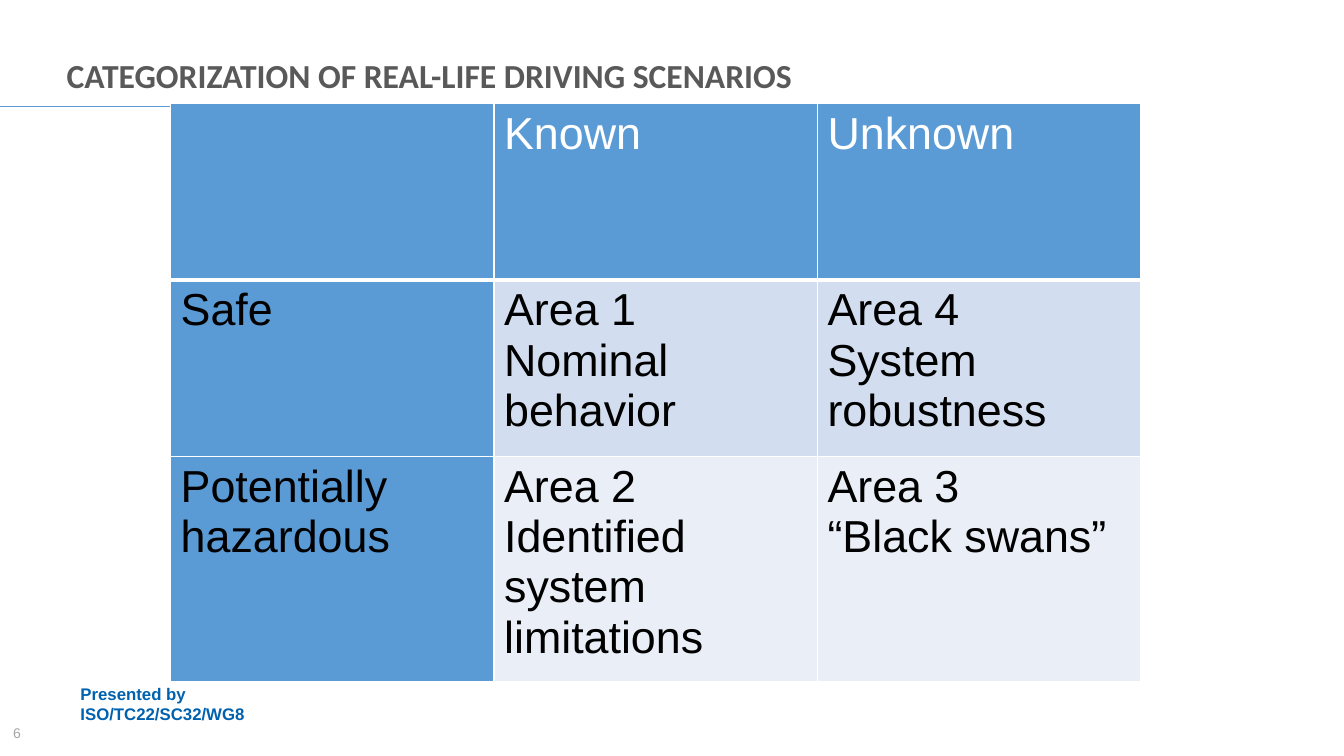
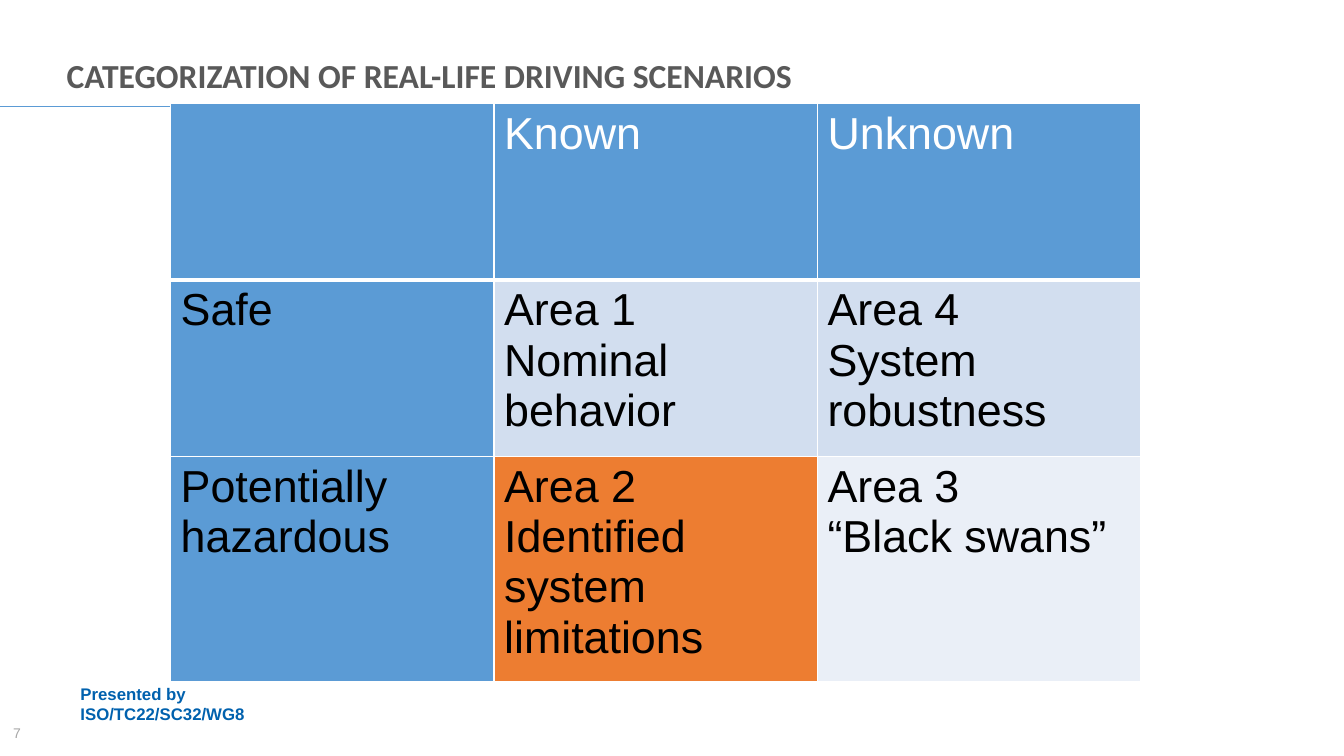
import pptx
import pptx.dml.color
import pptx.enum.shapes
import pptx.enum.text
import pptx.oxml
import pptx.oxml.ns
import pptx.util

Pt = pptx.util.Pt
RGBColor = pptx.dml.color.RGBColor

BLUE = RGBColor(0x5B, 0x9B, 0xD5)
PALE_BLUE = RGBColor(0xD2, 0xDE, 0xEF)
PALEST_BLUE = RGBColor(0xEA, 0xEF, 0xF7)
ORANGE = RGBColor(0xED, 0x7D, 0x31)
FOOTER_BLUE = RGBColor(0x00, 0x61, 0xAE)
DARK_GRAY = RGBColor(0x59, 0x59, 0x59)
LIGHT_GRAY = RGBColor(0xA6, 0xA6, 0xA6)
WHITE = RGBColor(0xFF, 0xFF, 0xFF)
BLACK = RGBColor(0x00, 0x00, 0x00)

TITLE = "CATEGORIZATION OF REAL-LIFE DRIVING SCENARIOS"
PRESENTER = "Presented by ISO/TC22/SC32/WG8"
SCENARIOS = [
    ["", "Known", "Unknown"],
    ["Safe", "Area 1\nNominal behavior", "Area 4\nSystem robustness"],
    ["Potentially hazardous", "Area 2\nIdentified system limitations",
     "Area 3\n“Black swans”"],
]
ROW_FILLS = [BLUE, PALE_BLUE, PALEST_BLUE]
# Page number and the fills that differ on that page, by (row, column)
PAGES = [(6, {}), (7, {(2, 1): ORANGE})]

TITLE_FONT = {"name": "Calibri", "size": Pt(24), "bold": True}
FOOTER_FONT = {"name": "Arial", "size": Pt(12), "bold": True}
NUMBER_FONT = {"name": "Arial", "size": Pt(10)}
TABLE_FONT = {"name": "Arial", "size": Pt(32), "bold": False}

TITLE_INSETS = {"margin_left": 0, "margin_top": Pt(3),
                "margin_right": Pt(9), "margin_bottom": Pt(3)}
TABLE_LEFT, TABLE_TOP = 121.9, 74.2
COLUMN_WIDTH, ROW_HEIGHT = 231, 126


def style_paragraphs(text_frame, font_format, color):
    for paragraph in text_frame.paragraphs:
        for attribute, value in font_format.items():
            setattr(paragraph.font, attribute, value)
        paragraph.font.color.rgb = color


def add_label(slide, text, place, font_format, color, insets=None):
    label = slide.shapes.add_textbox(*map(Pt, place)).text_frame
    label.word_wrap = True
    label.vertical_anchor = pptx.enum.text.MSO_ANCHOR.MIDDLE
    for attribute, value in (insets or {}).items():
        setattr(label, attribute, value)
    label.text = text
    style_paragraphs(label, font_format, color)
    return label


def add_title_rule(slide):
    rule = slide.shapes.add_connector(
        pptx.enum.shapes.MSO_CONNECTOR.STRAIGHT, 0, Pt(76.3), Pt(480), Pt(76.3))
    rule.line.color.rgb = BLUE
    rule.line.width = Pt(1)
    rule._element.spPr.append(pptx.oxml.parse_xml(
        f'<a:effectLst {pptx.oxml.ns.nsdecls("a")}/>'))


def add_borders(cell, bottom_width):
    """Draw white cell borders; call before the fill, which must follow them."""
    widths = {"L": 1, "R": 1, "T": 1, "B": bottom_width}
    for side, width in widths.items():
        cell._tc.get_or_add_tcPr().append(pptx.oxml.parse_xml(
            f'<a:ln{side} {pptx.oxml.ns.nsdecls("a")} w="{Pt(width)}">'
            f'<a:solidFill><a:srgbClr val="{WHITE}"/></a:solidFill></a:ln{side}>'))


def add_scenario_table(slide, special_fills):
    row_count, column_count = len(SCENARIOS), len(SCENARIOS[0])
    table = slide.shapes.add_table(
        row_count, column_count, Pt(TABLE_LEFT), Pt(TABLE_TOP),
        Pt(COLUMN_WIDTH * column_count), Pt(ROW_HEIGHT * row_count)).table
    table.first_row = table.horz_banding = False
    for row, texts in enumerate(SCENARIOS):
        for column, text in enumerate(texts):
            cell = table.cell(row, column)
            cell.text = text
            style_paragraphs(cell.text_frame, TABLE_FONT, BLACK if row else WHITE)
            add_borders(cell, bottom_width=1 if row else 3)
            usual_fill = ROW_FILLS[row] if column else BLUE
            cell.fill.solid()
            cell.fill.fore_color.rgb = special_fills.get((row, column), usual_fill)


def add_page(deck, number, special_fills):
    slide = deck.slides.add_slide(deck.slide_layouts[6])
    add_label(slide, PRESENTER, (50.4, 488.2, 196.6, 28.8), FOOTER_FONT, FOOTER_BLUE)
    add_title_rule(slide)
    title = add_label(slide, TITLE, (47.5, 36, 766.8, 38.9),
                      TITLE_FONT, DARK_GRAY, TITLE_INSETS)
    title.paragraphs[0].line_spacing = 0.9
    add_scenario_table(slide, special_fills)
    add_label(slide, str(number), (2.2, 509, 75.6, 28.8), NUMBER_FONT, LIGHT_GRAY)


def main():
    deck = pptx.Presentation()
    deck.slide_width, deck.slide_height = Pt(960), Pt(540)
    for number, special_fills in PAGES:
        add_page(deck, number, special_fills)
    deck.save("out.pptx")


if __name__ == "__main__":
    main()
